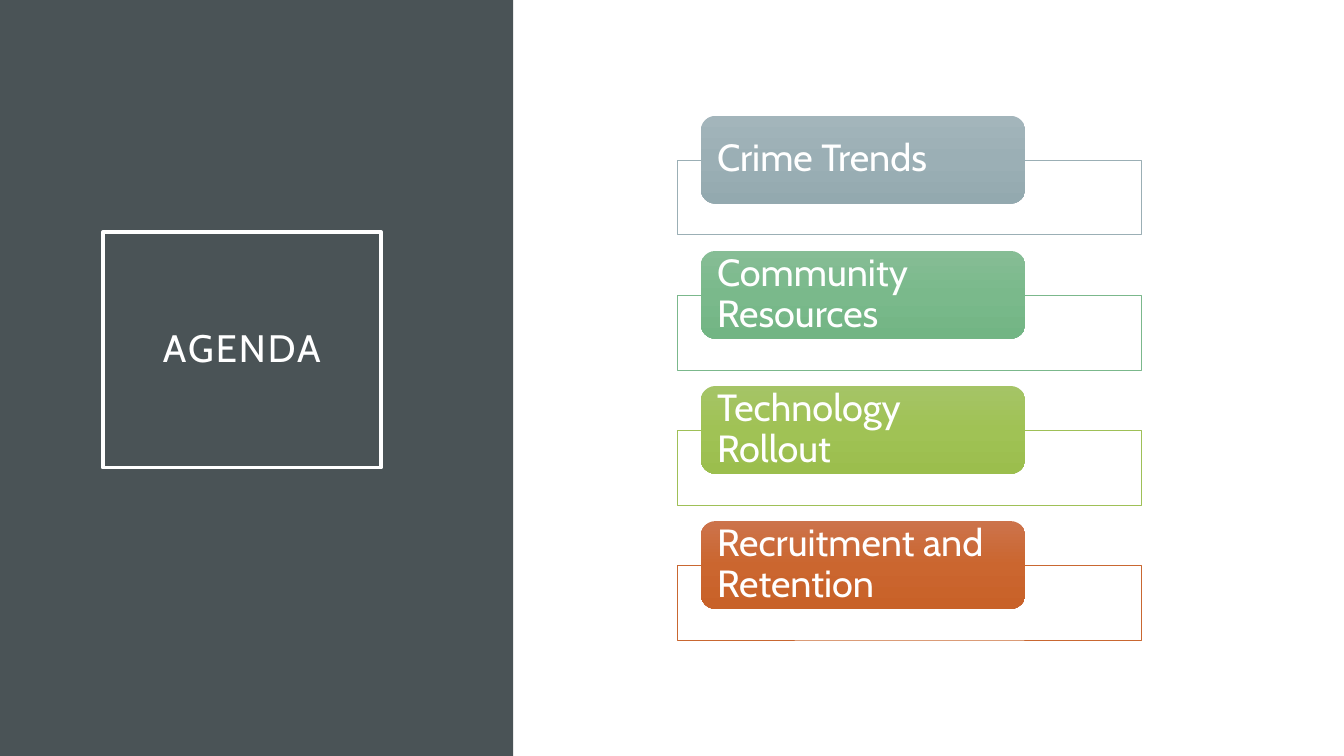
from copy import deepcopy
from dataclasses import dataclass

from lxml import etree
from pptx import Presentation
from pptx.dml.color import RGBColor
from pptx.enum.shapes import MSO_SHAPE
from pptx.enum.text import MSO_ANCHOR, MSO_AUTO_SIZE, PP_ALIGN
from pptx.oxml.ns import qn
from pptx.shapes.autoshape import Shape
from pptx.slide import Slide
from pptx.util import Inches, Pt

RECTANGLE = MSO_SHAPE.RECTANGLE
ROUNDED = MSO_SHAPE.ROUNDED_RECTANGLE
MIDDLE = MSO_ANCHOR.MIDDLE
NO_AUTOFIT = MSO_AUTO_SIZE.NONE
LEFT = PP_ALIGN.LEFT
CENTER = PP_ALIGN.CENTER

WHITE = RGBColor(0xFF, 0xFF, 0xFF)
SLATE = RGBColor(0x4A, 0x53, 0x56)
FONT = "Cabin"
TITLE_ONLY_LAYOUT = 5
FIRST_LABEL_TOP = 1.15
ROW_PITCH = 1.34
FRAME_DROP = 0.44


@dataclass(frozen=True)
class AgendaItem:
    text: str
    outline: RGBColor
    light: RGBColor
    middle: RGBColor
    dark: RGBColor


AGENDA = [
    AgendaItem("Crime Trends", RGBColor(0x9B, 0xAF, 0xB5), RGBColor(0xA3, 0xB5, 0xBB),
               RGBColor(0x9B, 0xAF, 0xB5), RGBColor(0x93, 0xA9, 0xAF)),
    AgendaItem("Community Resources", RGBColor(0x7B, 0xB8, 0x8C), RGBColor(0x86, 0xBD, 0x95),
               RGBColor(0x7A, 0xB9, 0x8B), RGBColor(0x72, 0xB5, 0x84)),
    AgendaItem("Technology Rollout", RGBColor(0x9F, 0xC0, 0x57), RGBColor(0xA5, 0xC4, 0x66),
               RGBColor(0xA0, 0xC2, 0x55), RGBColor(0x9B, 0xBE, 0x4D)),
    AgendaItem("Recruitment and Retention", RGBColor(0xC9, 0x67, 0x31), RGBColor(0xCC, 0x73, 0x4B),
               RGBColor(0xCB, 0x66, 0x2F), RGBColor(0xC8, 0x61, 0x28)),
]


def write_text(shape: Shape, text: str, size: float, align: PP_ALIGN,
               side_inset: float, end_inset: float) -> None:
    frame = shape.text_frame
    frame.text = text
    frame.word_wrap = True
    frame.auto_size = NO_AUTOFIT
    frame.vertical_anchor = MIDDLE
    frame.margin_left = frame.margin_right = Inches(side_inset)
    frame.margin_top = frame.margin_bottom = Inches(end_inset)
    para = frame.paragraphs[0]
    para.alignment = align
    para.line_spacing = 0.9
    para.font.name = FONT
    para.font.size = Pt(size)
    para.font.color.rgb = WHITE


def fill_gradient(shape: Shape, colors: list[RGBColor]) -> None:
    shape.fill.gradient()
    shape.fill.gradient_angle = 270
    stop_list = shape._element.spPr.find(qn("a:gradFill")).find(qn("a:gsLst"))
    stop_list.append(deepcopy(stop_list[0]))
    for index, (stop, color) in enumerate(zip(shape.fill.gradient_stops, colors)):
        stop.position = index / (len(colors) - 1)
        stop.color.rgb = color


def add_side_panel(page: Slide) -> None:
    panel = page.shapes.add_shape(RECTANGLE, 0, 0, Inches(5.09), Inches(7.5))
    panel.shadow.inherit = False
    panel.fill.solid()
    panel.fill.fore_color.rgb = SLATE
    panel.line.fill.background()
    page.shapes._spTree.insert(2, panel._element)


def format_title(page: Slide) -> None:
    title = page.shapes.title
    title.left, title.top = Inches(1.02), Inches(2.3)
    title.width, title.height = Inches(2.76), Inches(2.34)
    title.line.color.rgb = WHITE
    title.line.width = Pt(2.5)
    write_text(title, "AGENDA", 27.3, CENTER, 0.2, 0.2)
    span = title.text_frame.paragraphs[0].runs[0]
    span._r.get_or_add_rPr().set("spc", "150")


def add_agenda_item(page: Slide, item: AgendaItem, top: float) -> None:
    frame = page.shapes.add_shape(RECTANGLE, Inches(6.72), Inches(top + FRAME_DROP),
                                  Inches(4.6), Inches(0.74))
    frame.shadow.inherit = False
    frame.fill.solid()
    frame.fill.fore_color.rgb = WHITE
    color = frame._element.spPr.find(qn("a:solidFill")).find(qn("a:srgbClr"))
    etree.SubElement(color, qn("a:alpha")).set("val", "90000")
    frame.line.color.rgb = item.outline
    frame.line.width = Pt(0.5)

    label = page.shapes.add_shape(ROUNDED, Inches(6.95), Inches(top),
                                  Inches(3.22), Inches(0.87))
    label.shadow.inherit = False
    fill_gradient(label, [item.light, item.middle, item.dark])
    label.line.fill.background()
    write_text(label, item.text, 27, LEFT, 0.12, 0)


def main() -> None:
    deck = Presentation()
    deck.slide_width = Inches(13.33)
    deck.slide_height = Inches(7.5)
    page = deck.slides.add_slide(deck.slide_layouts[TITLE_ONLY_LAYOUT])
    add_side_panel(page)
    format_title(page)
    for row, item in enumerate(AGENDA):
        add_agenda_item(page, item, FIRST_LABEL_TOP + row * ROW_PITCH)
    deck.save("out.pptx")


if __name__ == "__main__":
    main()
